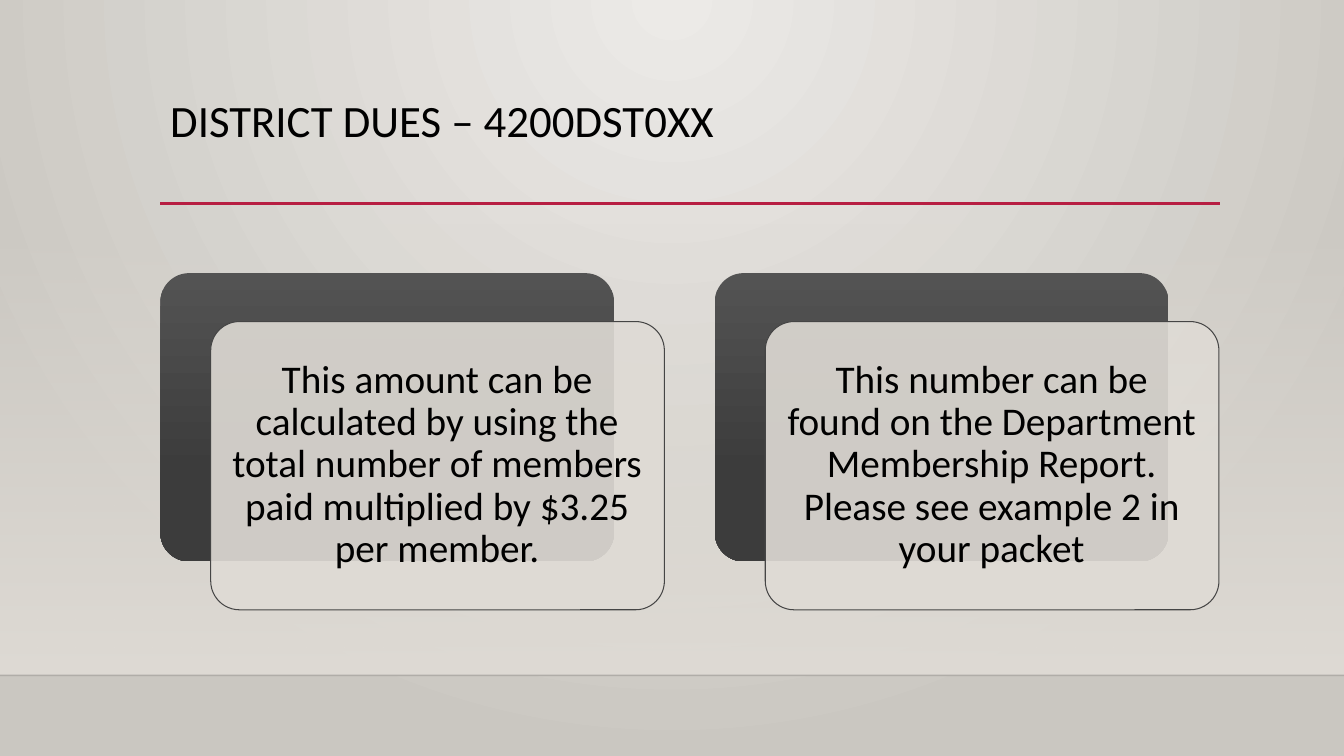
from lxml import etree
from pptx import Presentation
from pptx.dml.color import RGBColor
from pptx.enum.shapes import MSO_CONNECTOR, MSO_SHAPE
from pptx.enum.text import MSO_ANCHOR, PP_ALIGN
from pptx.oxml.ns import qn
from pptx.util import Inches, Pt

HUES = {
    "light": "ECEAE7", "stone": "CAC7C1", "sand": "DFDBD5",
    "top": "535353", "mid": "3C3C3C", "low": "393939",
    "edge": "454545", "red": "B71E42", "black": "000000",
}


def shade(fill, root, stops, round=False):
    """Fill with (position, hue, opacity) stops, downward or from the top centre."""
    fill.gradient()
    grad = root.find(".//" + qn("a:gradFill"))
    for child in list(grad):
        grad.remove(child)
    group = etree.SubElement(grad, qn("a:gsLst"))
    for pos, hue, alpha in stops:
        stop = etree.SubElement(group, qn("a:gs"), pos=str(pos * 1000))
        tint = etree.SubElement(stop, qn("a:srgbClr"), val=HUES[hue])
        if alpha < 100:
            etree.SubElement(tint, qn("a:alpha"), val=str(alpha * 1000))
    if round:
        path = etree.SubElement(grad, qn("a:path"), path="circle")
        etree.SubElement(path, qn("a:fillToRect"), l="43000", t="0", r="43000", b="100000")
    else:
        etree.SubElement(grad, qn("a:lin"), ang="5400000", scaled="0")


def write(text, x, y, w, h, size=28, pad=0.12, align=PP_ALIGN.CENTER,
          anchor=MSO_ANCHOR.MIDDLE):
    frame = slide.shapes.add_textbox(Inches(x), Inches(y), Inches(w), Inches(h)).text_frame
    frame.word_wrap = True
    frame.vertical_anchor = anchor
    frame.margin_left = frame.margin_right = Inches(pad)
    frame.margin_top = frame.margin_bottom = Inches(pad)
    para = frame.paragraphs[0]
    para.alignment = align
    para.line_spacing = 0.9
    run = para.add_run()
    run.text = text
    run.font.name = "Calibri"
    run.font.size = Pt(size)
    run.font.color.rgb = RGBColor.from_string(HUES["black"])


deck = Presentation()
deck.slide_width, deck.slide_height = Inches(13.33), Inches(7.5)
slide = deck.slides.add_slide(deck.slide_layouts[6])

# Background and the soft band above the floor
shade(slide.background.fill, slide.element,
      [(0, "light", 100), (100, "stone", 100)], round=True)
band = slide.shapes.add_shape(
    MSO_SHAPE.RECTANGLE, 0, Inches(2.21), Inches(13.33), Inches(4.49))
band.shadow.inherit = False
band.line.fill.background()
shade(band.fill, band.element, [(0, "sand", 0), (100, "sand", 100)])

# Floor line and title rule
for left, right, y, hue, width, alpha in (
    (0, 13.33, 6.7, "black", 1, 20),
    (1.59, 12.1, 2.02, "red", 2.5, 100),
):
    rule = slide.shapes.add_connector(
        MSO_CONNECTOR.STRAIGHT, Inches(left), Inches(y), Inches(right), Inches(y))
    rule.line.width = Pt(width)
    rule.line.color.rgb = RGBColor.from_string(HUES[hue])
    tint = rule.element.find(".//" + qn("a:srgbClr"))
    etree.SubElement(tint, qn("a:alpha"), val=str(alpha * 1000))
    etree.SubElement(rule.element.spPr, qn("a:effectLst"))

# Title
write("DISTRICT DUES – 4200DST0XX", 1.59, 0.88, 10.5, 1.15, size=32, pad=0.1,
      align=PP_ALIGN.LEFT, anchor=MSO_ANCHOR.TOP)

# Cards: a dark back plate and a pale front plate holding the text
notes = (
    "This amount can be calculated by using the total number of members paid "
    "multiplied by $3.25 per member.",
    "This number can be found on the Department Membership Report. "
    "Please see example 2 in your packet",
)
for col, note in enumerate(notes):
    x, y = 1.59 + 5.5 * col, 2.71
    back, front = [
        slide.shapes.add_shape(MSO_SHAPE.ROUNDED_RECTANGLE, Inches(x + dx),
                               Inches(y + dy), Inches(4.5), Inches(2.86))
        for dx, dy in ((0, 0), (0.5, 0.48))
    ]
    for plate in (back, front):
        plate.adjustments[0] = 0.1
        plate.shadow.inherit = False
    back.line.fill.background()
    shade(back.fill, back.element,
          [(0, "top", 100), (69, "mid", 100), (100, "low", 100)])
    front.fill.solid()
    front.fill.fore_color.rgb = RGBColor.from_string(HUES["sand"])
    tint = front.element.find(".//" + qn("a:srgbClr"))
    etree.SubElement(tint, qn("a:alpha"), val="90000")
    front.line.width = Pt(0.75)
    front.line.color.rgb = RGBColor.from_string(HUES["edge"])
    write(note, x + 0.58, y + 0.56, 4.33, 2.69)

deck.save("out.pptx")
